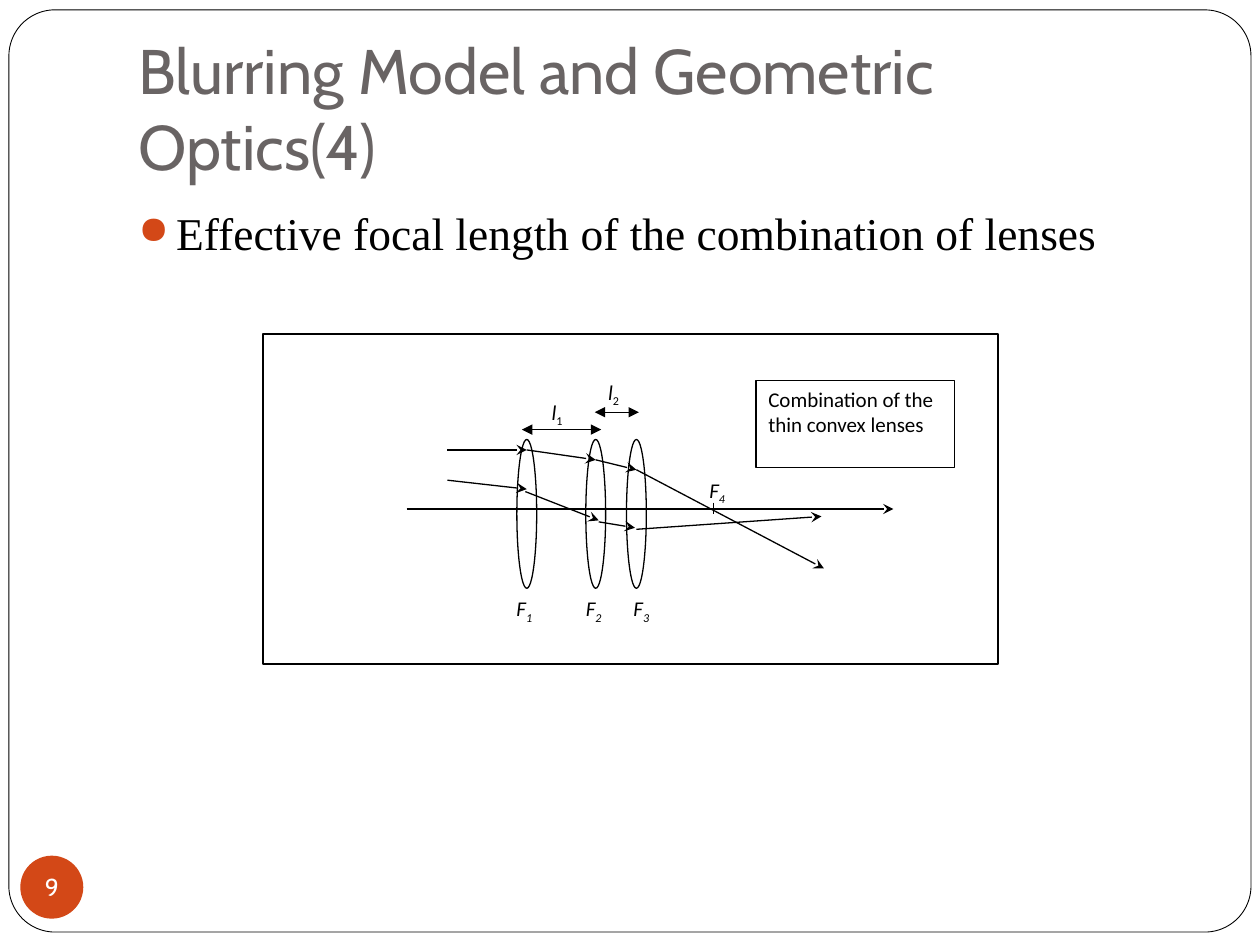
from lxml.etree import SubElement
from pptx import Presentation
from pptx.dml.color import RGBColor
from pptx.enum.shapes import MSO_CONNECTOR, MSO_SHAPE
from pptx.enum.text import MSO_ANCHOR, PP_ALIGN
from pptx.oxml.ns import qn
from pptx.util import Cm, Pt

BLACK = RGBColor(0x00, 0x00, 0x00)
WHITE = RGBColor(0xFF, 0xFF, 0xFF)
GRAY = RGBColor(0x69, 0x64, 0x64)
ORANGE = RGBColor(0xD3, 0x48, 0x17)

TITLE_FONT = {"name": "Cabin", "size": Pt(36), "color": GRAY}
BODY_FONT = {"name": "Times New Roman", "size": Pt(26), "color": BLACK}
BADGE_FONT = {"name": "Cabin", "size": Pt(14), "color": WHITE}
NOTE_FONT = {"name": "Calibri", "size": Pt(12), "color": BLACK}

LENS_CENTERS = (10.62, 12.01, 12.83)
LENS_WIDTH, LENS_TOP, LENS_HEIGHT = 0.4, 8.86, 3
AXIS_Y = 10.26

UPPER_RAY = ((9.02, 9.07, 10.62, 9.07), (10.62, 9.07, 12.01, 9.27),
             (12.01, 9.27, 12.83, 9.47), (12.83, 9.47, 16.61, 11.46))
LOWER_RAY = ((9.02, 9.68, 10.62, 9.86), (10.59, 9.91, 12.07, 10.49),
             (12.07, 10.52, 12.8, 10.64), (12.83, 10.67, 16.56, 10.41))
OPTICAL_AXIS = (8.2, AXIS_Y, 18.01, AXIS_Y)
SPACINGS = ((10.52, 8.66, 12.12, 8.66), (11.99, 8.31, 12.88, 8.31))
FOCUS_TICK = (14.38, 10.13, 14.38, 10.36)

FOCAL_LABELS = (("1", 10.16, 11.89), ("2", 11.56, 11.89),
                ("3", 12.52, 11.89), ("4", 14.05, 9.5))
SPACING_LABELS = (("1", 10.87, 7.92), ("2", 12.01, 7.52))


def add_span(para, text, style, italic=False, baseline=None):
    span = para.add_run()
    span.text = text
    for key, value in style.items():
        if key == "color":
            span.font.color.rgb = value
        else:
            setattr(span.font, key, value)
    span.font.italic = italic
    if baseline is not None:
        span._r.get_or_add_rPr().set("baseline", str(baseline))


def add_outline(page, kind, place, fill=None, line=None, width=0.75):
    shape = page.shapes.add_shape(kind, *map(Cm, place))
    shape.shadow.inherit = False
    if fill is None:
        shape.fill.background()
    else:
        shape.fill.solid()
        shape.fill.fore_color.rgb = fill
    if line is None:
        shape.line.fill.background()
    else:
        shape.line.color.rgb = line
        shape.line.width = Pt(width)
    return shape


def add_box(page, place, **frame_format):
    box = page.shapes.add_textbox(*map(Cm, place))
    for key, value in {"word_wrap": True, **frame_format}.items():
        setattr(box.text_frame, key, value)
    return box.text_frame.paragraphs[0]


def add_line(page, ends, **arrowheads):
    line = page.shapes.add_connector(MSO_CONNECTOR.STRAIGHT, *map(Cm, ends))
    line.line.color.rgb = BLACK
    line.line.width = Pt(0.75)
    outline = line.line._get_or_add_ln()
    for end, kind in arrowheads.items():
        SubElement(outline, qn(f"a:{end}"), type=kind)
    SubElement(line._element.spPr, qn("a:effectLst"))


def add_label(page, letter, index, place, italic_index):
    para = add_box(page, place)
    add_span(para, letter, NOTE_FONT, italic=True)
    add_span(para, index, NOTE_FONT, italic=italic_index, baseline=-25000)


def add_bullet(para):
    para.space_before = Pt(5.8)
    properties = para._p.get_or_add_pPr()
    properties.set("marL", str(Cm(0.76)))
    properties.set("indent", str(Cm(-0.76)))
    color = SubElement(properties, qn("a:buClr"))
    SubElement(color, qn("a:srgbClr"), val=str(ORANGE))
    SubElement(properties, qn("a:buSzPct"), val="85000")
    SubElement(properties, qn("a:buChar"), char="●")


def add_badge(page, number):
    badge = add_outline(page, MSO_SHAPE.OVAL, (0.41, 17.25, 1.27, 1.27), ORANGE)
    frame = badge.text_frame
    frame_format = {"margin_left": 0, "margin_right": 0, "margin_top": 0,
                    "margin_bottom": 0, "word_wrap": False,
                    "vertical_anchor": MSO_ANCHOR.MIDDLE}
    for key, value in frame_format.items():
        setattr(frame, key, value)
    para = frame.paragraphs[0]
    para.alignment = PP_ALIGN.CENTER
    add_span(para, number, BADGE_FONT)


def add_caption(page, lines):
    caption = add_outline(page, MSO_SHAPE.RECTANGLE, (15.24, 7.67, 4.01, 1.75), WHITE, BLACK)
    frame = caption.text_frame
    frame.vertical_anchor = MSO_ANCHOR.TOP
    for number, text in enumerate(lines):
        para = frame.add_paragraph() if number else frame.paragraphs[0]
        para.alignment = PP_ALIGN.LEFT
        add_span(para, text, NOTE_FONT)


def add_diagram(page):
    add_outline(page, MSO_SHAPE.RECTANGLE, (5.31, 6.73, 14.81, 6.65), line=BLACK, width=1)
    for center in LENS_CENTERS:
        place = (center - LENS_WIDTH / 2, LENS_TOP, LENS_WIDTH, LENS_HEIGHT)
        add_outline(page, MSO_SHAPE.OVAL, place, line=BLACK)
    for ends in (*UPPER_RAY, *LOWER_RAY, OPTICAL_AXIS):
        add_line(page, ends, tailEnd="stealth")
    for ends in SPACINGS:
        add_line(page, ends, headEnd="triangle", tailEnd="triangle")
    add_line(page, FOCUS_TICK)
    for index, left, top in FOCAL_LABELS:
        add_label(page, "F", index, (left, top, 0.94, 0.89), True)
    for index, left, top in SPACING_LABELS:
        add_label(page, "l", index, (left, top, 1.19, 1.02), False)
    add_caption(page, ("Combination of the", "thin convex lenses"))


def main():
    deck = Presentation()
    deck.slide_width, deck.slide_height = Cm(25.4), Cm(19.05)
    page = deck.slides.add_slide(deck.slide_layouts[6])

    border = add_outline(page, MSO_SHAPE.ROUNDED_RECTANGLE,
                         (0.18, 0.2, 25.04, 18.59), WHITE, BLACK, 0.5)
    border.adjustments[0] = 0.05
    title = add_box(page, (2.54, 0.76, 21.59, 3.18),
                    vertical_anchor=MSO_ANCHOR.BOTTOM, margin_bottom=Cm(0.25))
    add_span(title, "Blurring Model and Geometric Optics(4)", TITLE_FONT)
    add_badge(page, "9")
    body = add_box(page, (2.54, 4.01, 21.59, 12.7))
    add_bullet(body)
    add_span(body, "Effective focal length of the combination of lenses", BODY_FONT)
    add_diagram(page)

    deck.save("out.pptx")


if __name__ == "__main__":
    main()
